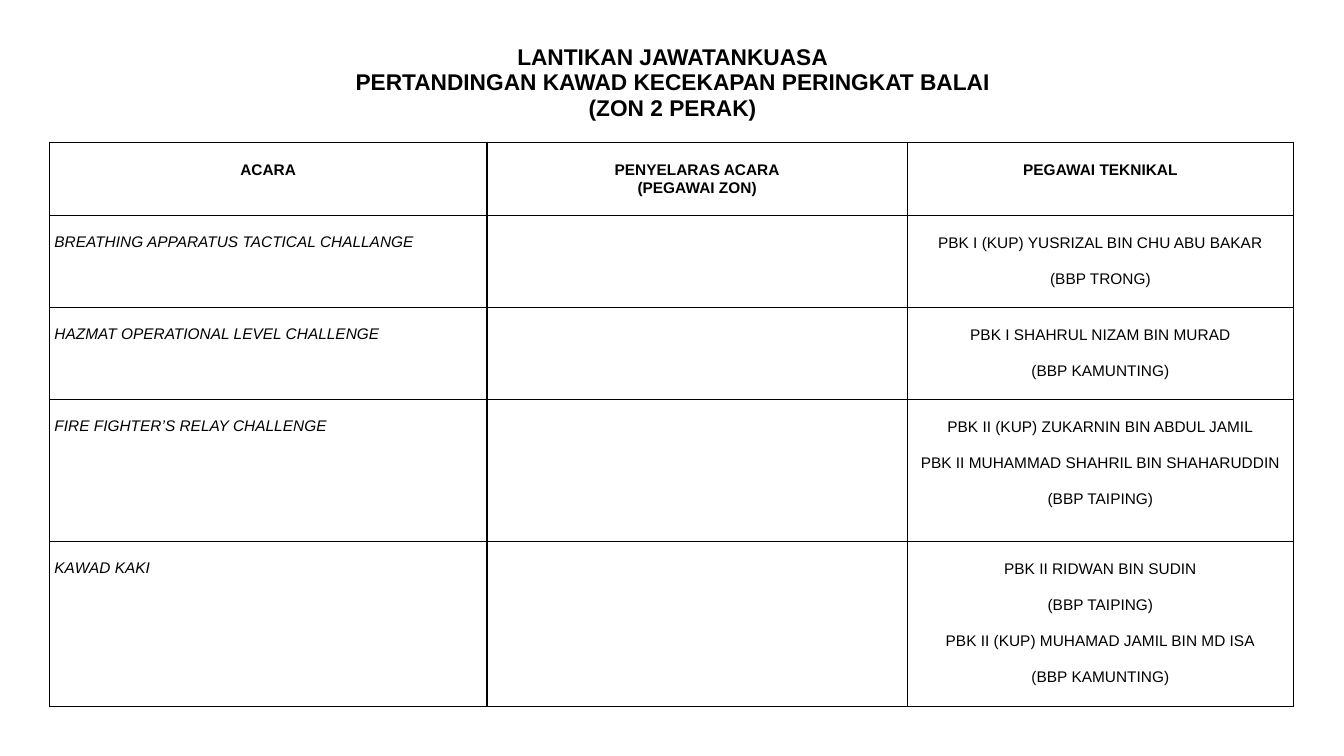
from lxml.etree import SubElement
from pptx import Presentation
from pptx.dml.color import RGBColor
from pptx.enum.text import MSO_ANCHOR, PP_ALIGN
from pptx.oxml.ns import qn
from pptx.util import Inches, Pt

BLACK = RGBColor(0, 0, 0)
WHITE = RGBColor(255, 255, 255)

TITLE = [
    "LANTIKAN JAWATANKUASA",
    "PERTANDINGAN KAWAD KECEKAPAN PERINGKAT BALAI",
    "(ZON 2 PERAK)",
]
HEADS = [["ACARA"], ["PENYELARAS ACARA", "(PEGAWAI ZON)"], ["PEGAWAI TEKNIKAL"]]
EVENTS = [
    ("BREATHING APPARATUS TACTICAL CHALLANGE",
     ["PBK I (KUP) YUSRIZAL BIN CHU ABU BAKAR", "(BBP TRONG)"]),
    ("HAZMAT OPERATIONAL LEVEL CHALLENGE",
     ["PBK I SHAHRUL NIZAM BIN MURAD", "(BBP KAMUNTING)"]),
    ("FIRE FIGHTER’S RELAY CHALLENGE",
     ["PBK II (KUP) ZUKARNIN BIN ABDUL JAMIL",
      "PBK II MUHAMMAD SHAHRIL BIN SHAHARUDDIN", "(BBP TAIPING)"]),
    ("KAWAD KAKI",
     ["PBK II RIDWAN BIN SUDIN", "(BBP TAIPING)",
      "PBK II (KUP) MUHAMAD JAMIL BIN MD ISA", "(BBP KAMUNTING)"]),
]
WIDTHS = [4.34, 4.17, 3.83]
HEIGHTS = [0.73, 0.91, 0.91, 1.41, 1.64]


def write(frame, lines, size, align=PP_ALIGN.CENTER, pitch=1.07, gap=0,
          bold=False, slant=False):
    """Put each line in a paragraph of its own, with gap points between."""
    for i, line in enumerate(lines):
        para = frame.paragraphs[0] if i == 0 else frame.add_paragraph()
        para.alignment = align
        para.line_spacing = pitch
        para.space_before = Pt(gap if i else 0)
        run = para.add_run()
        run.text = line
        font = run.font
        font.name, font.size = "Arial", Pt(size)
        font.bold, font.italic = bold, slant
        font.color.rgb = BLACK


def frame_cell(cell):
    """Give a cell a white fill, narrow margins and black borders."""
    cell.margin_left = cell.margin_right = Inches(0.05)
    cell.margin_top, cell.margin_bottom = Inches(0.18), 0
    cell.fill.solid()
    cell.fill.fore_color.rgb = WHITE
    props = cell._tc.get_or_add_tcPr()
    for n, side in enumerate(("lnL", "lnR", "lnT", "lnB")):
        line = SubElement(props, qn("a:" + side), w=str(Pt(1)))
        ink = SubElement(line, qn("a:solidFill"))
        SubElement(ink, qn("a:srgbClr"), val=str(BLACK))
        props.insert(n, line)


deck = Presentation()
deck.slide_width, deck.slide_height = Inches(13.33), Inches(7.5)
slide = deck.slides.add_slide(deck.slide_layouts[6])

title = slide.shapes.add_textbox(
    Inches(0.92), Inches(0.4), Inches(11.5), Inches(0.85)).text_frame
title.word_wrap = True
title.vertical_anchor = MSO_ANCHOR.MIDDLE
write(title, TITLE, 16.2, pitch=0.94, bold=True)

table = slide.shapes.add_table(
    len(HEIGHTS), len(WIDTHS), Inches(0.49), Inches(1.41),
    Inches(sum(WIDTHS)), Inches(sum(HEIGHTS))).table
table.horz_banding = False
for col, width in zip(table.columns, WIDTHS):
    col.width = Inches(width)
for row, height in zip(table.rows, HEIGHTS):
    row.height = Inches(height)
for cell in table.iter_cells():
    frame_cell(cell)

for c, head in enumerate(HEADS):
    write(table.cell(0, c).text_frame, head, 11, bold=True)
for r, (event, staff) in enumerate(EVENTS, 1):
    write(table.cell(r, 0).text_frame, [event], 11, PP_ALIGN.LEFT, 1, slant=True)
    write(table.cell(r, 2).text_frame, staff, 11, gap=12.6)

deck.save("out.pptx")
